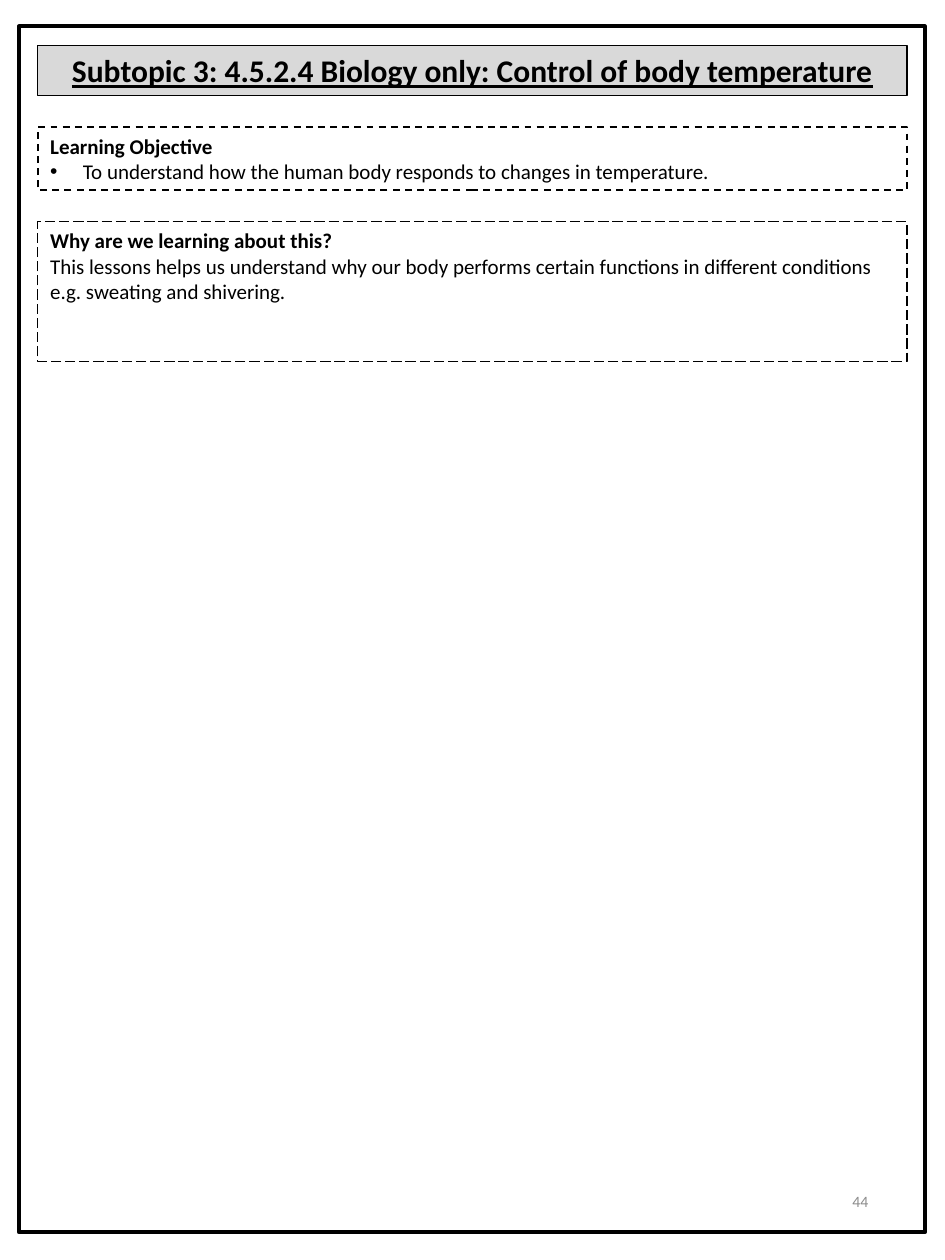
from lxml import etree
from pptx import Presentation
from pptx.dml.color import RGBColor
from pptx.enum.dml import MSO_LINE
from pptx.enum.shapes import MSO_SHAPE
from pptx.enum.text import MSO_ANCHOR, MSO_AUTO_SIZE, PP_ALIGN
from pptx.oxml.ns import qn
from pptx.util import Inches, Pt

RECT = MSO_SHAPE.RECTANGLE
DASH, LONG_DASH = MSO_LINE.DASH, MSO_LINE.LONG_DASH
LEFT, CENTER, RIGHT = PP_ALIGN.LEFT, PP_ALIGN.CENTER, PP_ALIGN.RIGHT
TOP, MIDDLE = MSO_ANCHOR.TOP, MSO_ANCHOR.MIDDLE

COLORS = {"ink": "000000", "band": "D9D9D9", "muted": "8C8C8C"}
COLS, ROWS = 25, 100
LEFT_COL, WIDE = 1, 23          # full-width boxes leave one column each side
FIRST_ROW, GAP = 3.6, 2.5       # stack of boxes, in rows


class Page:
    font = "Calibri"

    def __init__(self, prs):
        self.s = prs.slides.add_slide(prs.slide_layouts[6])
        self.col = prs.slide_width / COLS
        self.row = prs.slide_height / ROWS

    def place(self, x, y, w, h):
        return [round(v) for v in (x * self.col, y * self.row, w * self.col, h * self.row)]

    def box(self, x, y, w, h, weight, fill=None, dash=None):
        sp = self.s.shapes.add_shape(RECT, *self.place(x, y, w, h))
        sp.shadow.inherit = False
        if fill:
            sp.fill.solid()
            sp.fill.fore_color.rgb = RGBColor.from_string(COLORS[fill])
        else:
            sp.fill.background()
        sp.line.color.rgb = RGBColor.from_string(COLORS["ink"])
        sp.line.width = Pt(weight)
        if dash:
            sp.line.dash_style = dash
        return sp

    def label(self, x, y, w, h):
        return self.s.shapes.add_textbox(*self.place(x, y, w, h))

    def text(self, sp, lines, align=LEFT, anchor=TOP, color="ink"):
        """Each line is (text, font values, bulleted)."""
        tf = sp.text_frame
        frame = {"word_wrap": True, "auto_size": MSO_AUTO_SIZE.NONE, "vertical_anchor": anchor}
        for name, value in frame.items():
            setattr(tf, name, value)
        for i, (words, style, bulleted) in enumerate(lines):
            p = tf.add_paragraph() if i else tf.paragraphs[0]
            p.alignment = align
            r = p.add_run()
            r.text = words
            for name, value in {"name": self.font, **style}.items():
                setattr(r.font, name, value)
            r.font.color.rgb = RGBColor.from_string(COLORS[color])
            if bulleted:
                self.bullet(p)

    def bullet(self, p, indent=0.26):
        pPr = p._p.get_or_add_pPr()
        pPr.set("marL", str(Inches(indent)))
        pPr.set("indent", str(-Inches(indent)))
        etree.SubElement(pPr, qn("a:buFont")).set("typeface", "Arial")
        etree.SubElement(pPr, qn("a:buChar")).set("char", "•")


def main():
    prs = Presentation()
    prs.slide_width, prs.slide_height = Inches(7.5), Inches(10)
    page = Page(prs)

    title = {"size": Pt(18), "bold": True, "underline": True}
    heading = {"size": Pt(12), "bold": True}
    body = {"size": Pt(12), "bold": False}

    # Page frame
    page.box(0.5, 2.1, 23.97, 95.7, 2.25)

    # Title band and the two dashed boxes, stacked with equal gaps
    stack = [
        (4, {"weight": 0.75, "fill": "band"}, CENTER,
         [("Subtopic 3: 4.5.2.4 Biology only: Control of body temperature", title, False)]),
        (5, {"weight": 1, "dash": DASH}, LEFT,
         [("Learning Objective", heading, False),
          ("To understand how the human body responds to changes in temperature.", body, True)]),
        (11.1, {"weight": 0.75, "dash": LONG_DASH}, LEFT,
         [("Why are we learning about this?", heading, False),
          ("This lessons helps us understand why our body performs certain functions "
           "in different conditions e.g. sweating and shivering.", body, False)]),
    ]
    y = FIRST_ROW
    for height, look, align, lines in stack:
        page.text(page.box(LEFT_COL, y, WIDE, height, **look), lines, align)
        y += height + GAP

    # Page number
    number = page.label(17.67, 92.7, 5.63, 5.3)
    page.text(number, [("44", {"size": Pt(9)}, False)], RIGHT, MIDDLE, "muted")

    prs.save("out.pptx")


if __name__ == "__main__":
    main()
